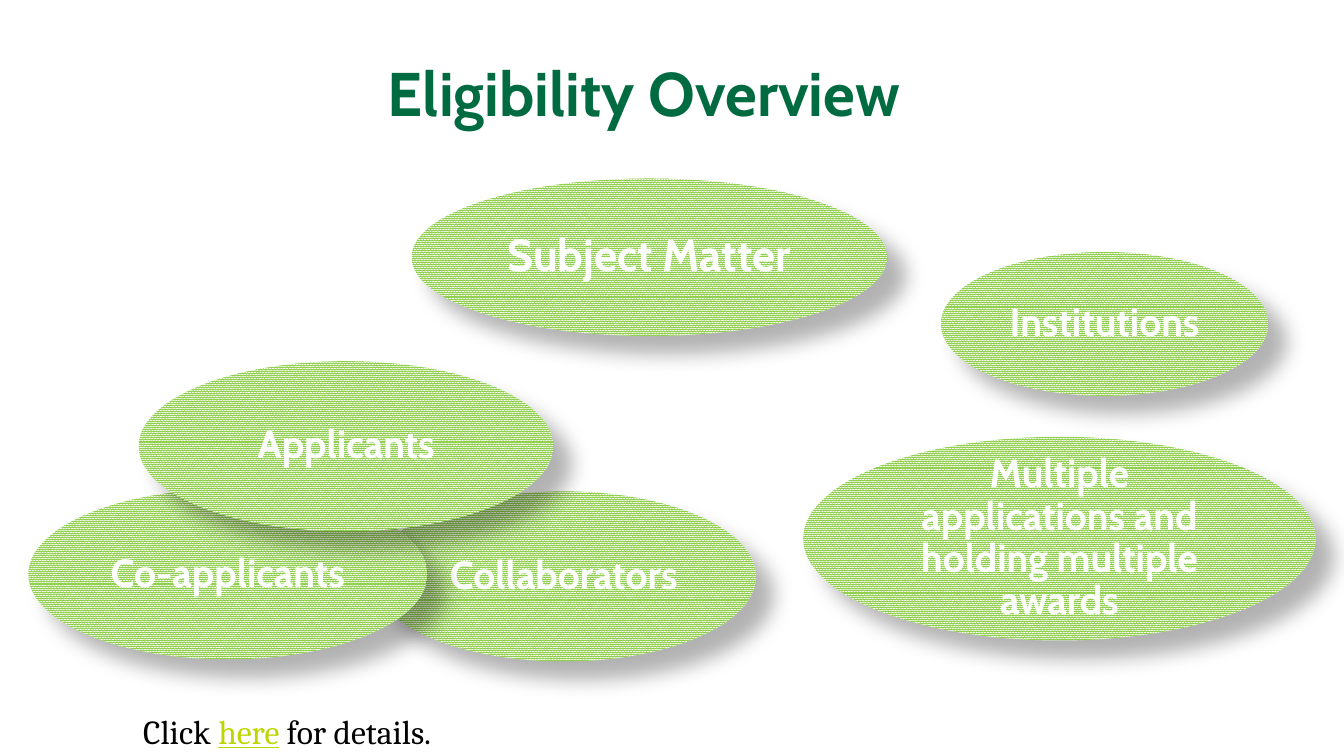
from dataclasses import dataclass

from lxml.etree import SubElement
from pptx import Presentation
from pptx.dml.color import RGBColor
from pptx.enum.dml import MSO_PATTERN
from pptx.enum.shapes import MSO_SHAPE
from pptx.enum.text import MSO_ANCHOR, MSO_AUTO_SIZE, PP_ALIGN
from pptx.oxml.ns import qn
from pptx.shapes.autoshape import Shape
from pptx.shapes.shapetree import GroupShapes, SlideShapes
from pptx.text.text import Font
from pptx.util import Emu, Pt

EMU_PER_PX = 9525
WHITE, BLACK = "FFFFFF", "000000"
DARK_GREEN, LEAF_GREEN, LINK_GREEN = "006A40", "92D050", "BDD600"


@dataclass(frozen=True)
class Topic:
    label: str
    left: int
    top: int
    width: int
    height: int
    size: int = 28


TOPICS = [
    Topic("Subject Matter", 392, 170, 453, 150, 32),
    Topic("Institutions", 896, 240, 312, 137),
    Topic("Multiple applications and holding multiple awards", 765, 416, 488, 194),
]
PEOPLE = [
    Topic("Collaborators", 354, 468, 366, 162),
    Topic("Co-applicants", 27, 466, 380, 162),
    Topic("Applicants", 132, 344, 395, 162),
]


def px(length: int) -> Emu:
    return Emu(length * EMU_PER_PX)


def color(value: str) -> RGBColor:
    return RGBColor.from_string(value)


def style(font: Font, name: str, size: int, ink: str, bold: bool = False) -> None:
    font.name, font.size, font.bold = name, Pt(size), bold
    font.color.rgb = color(ink)


def add_soft_shadow(oval: Shape) -> None:
    oval.shadow.inherit = False
    effects = oval._element.spPr.find(qn("a:effectLst"))
    shadow = SubElement(effects, qn("a:outerShdw"), blurRad=str(Pt(15)),
                        dist=str(Pt(18)), dir=str(45 * 60000),
                        algn="tl", rotWithShape="0")
    tint = SubElement(shadow, qn("a:srgbClr"), val=BLACK)
    SubElement(tint, qn("a:alpha"), val="30000")


def add_topic(shapes: SlideShapes | GroupShapes, topic: Topic) -> None:
    oval = shapes.add_shape(MSO_SHAPE.OVAL, px(topic.left), px(topic.top),
                            px(topic.width), px(topic.height))
    oval.fill.patterned()
    oval.fill.pattern = MSO_PATTERN.PERCENT_90
    oval.fill.fore_color.rgb = color(LEAF_GREEN)
    oval.fill.back_color.rgb = color(WHITE)
    oval.line.fill.background()
    add_soft_shadow(oval)

    frame = oval.text_frame
    frame.word_wrap = True
    frame.vertical_anchor = MSO_ANCHOR.MIDDLE
    frame.margin_left = frame.margin_right = px(12)
    frame.margin_top = frame.margin_bottom = px(12)
    frame.text = topic.label
    label = frame.paragraphs[0]
    label.alignment = PP_ALIGN.CENTER
    label.line_spacing = 0.9
    style(label.runs[0].font, "Cabin", topic.size, WHITE, bold=True)


def add_title(shapes: SlideShapes) -> None:
    title = shapes.add_textbox(px(360), px(48), px(560), px(81)).text_frame
    title.word_wrap = False
    title.auto_size = MSO_AUTO_SIZE.SHAPE_TO_FIT_TEXT
    title.text = "Eligibility Overview"
    style(title.paragraphs[0].runs[0].font, "Cabin", 44, DARK_GREEN, bold=True)


def add_details_note(shapes: SlideShapes) -> None:
    note = shapes.add_textbox(px(127), px(672), px(610), px(48)).text_frame
    note.word_wrap = True
    note.auto_size = MSO_AUTO_SIZE.SHAPE_TO_FIT_TEXT
    for words, ink in (("Click ", BLACK), ("here", LINK_GREEN), (" for details.", BLACK)):
        run = note.paragraphs[0].add_run()
        run.text = words
        style(run.font, "Cambria", 24, ink)
        run.font.underline = ink == LINK_GREEN


def main() -> None:
    deck = Presentation()
    deck.slide_width, deck.slide_height = px(1280), px(720)
    slide = deck.slides.add_slide(deck.slide_layouts[6])

    # Heading
    add_title(slide.shapes)

    # Separate topics
    for topic in TOPICS:
        add_topic(slide.shapes, topic)

    # Overlapping group of people, back to front
    people = slide.shapes.add_group_shape()
    for role in PEOPLE:
        add_topic(people.shapes, role)

    # Closing note
    add_details_note(slide.shapes)

    deck.save("out.pptx")


if __name__ == "__main__":
    main()
